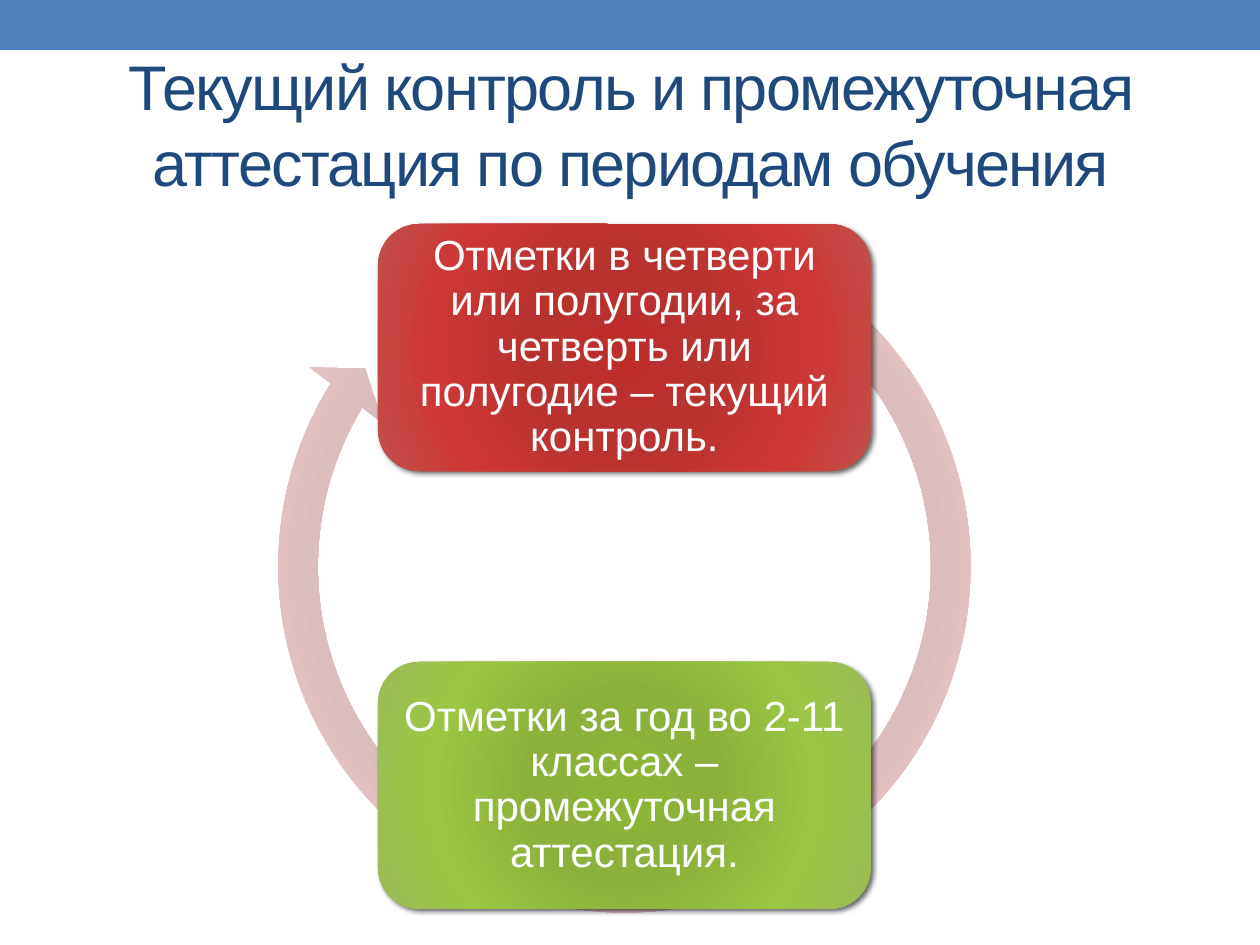
from dataclasses import dataclass

from pptx import Presentation
from pptx import util as u
from pptx.dml.color import RGBColor
from pptx.enum import shapes, text
from pptx.oxml import parse_xml
from pptx.oxml.ns import nsdecls

PX = 914400 / 126


@dataclass(frozen=True)
class Theme:
    font: str = "Arial"
    title_size: int = 36
    card_size: int = 24
    band: str = "4F81BD"
    title: str = "1F497D"
    card_text: str = "FFFFFF"
    shadow: str = "000000"
    arrow: tuple = ("CCADAD", "CBAEAE", "E3C2C2", "E8D0D0")
    red: tuple = ("BD2D29", "B8322E", "CD3834", "C0504D")
    green: tuple = ("8CB537", "8BB13B", "9BC542", "9BBB59")
    stops: tuple = (0, 34, 70, 100)


THEME = Theme()


def px(value):
    return u.Emu(round(value * PX))


def add_plain_shape(slide, kind, box):
    shape = slide.shapes.add_shape(kind, *map(px, box))
    shape.shadow.inherit = False
    shape.line.fill.background()
    return shape


def fill_radial(shape, colors):
    """Fill with a circular gradient centred on the shape."""
    stops = "".join(
        f'<a:gs pos="{stop * 1000}"><a:srgbClr val="{color}"/></a:gs>'
        for stop, color in zip(THEME.stops, colors))
    gradient = parse_xml(
        f'<a:gradFill {nsdecls("a")} rotWithShape="1"><a:gsLst>{stops}</a:gsLst>'
        '<a:path path="circle"><a:fillToRect l="100000" t="100000" r="100000" b="100000"/>'
        '</a:path></a:gradFill>')
    shape._element.spPr.find("{*}prstGeom").addnext(gradient)


def add_shadow(shape):
    effects = shape._element.spPr.find("{*}effectLst")
    effects.append(parse_xml(
        f'<a:outerShdw {nsdecls("a")} blurRad="38100" dist="25400" dir="2700000" rotWithShape="0">'
        f'<a:srgbClr val="{THEME.shadow}"><a:alpha val="60000"/></a:srgbClr></a:outerShdw>'))


def write_text(shape, words, *, size, color, line_spacing=None, tracking=None, inset=None):
    frame = shape.text_frame
    frame.word_wrap = True
    frame.auto_size = text.MSO_AUTO_SIZE.NONE
    frame.vertical_anchor = text.MSO_ANCHOR.MIDDLE
    if inset is not None:
        frame.margin_left = frame.margin_right = px(inset)
        frame.margin_top = frame.margin_bottom = px(inset)
    paragraph = frame.paragraphs[0]
    paragraph.alignment = text.PP_ALIGN.CENTER
    paragraph.line_spacing = line_spacing
    run = paragraph.add_run()
    run.text = words
    run.font.name = THEME.font
    run.font.size = u.Pt(size)
    run.font.color.rgb = RGBColor.from_string(color)
    if tracking is not None:
        run.font._element.set("spc", str(tracking * 100))


def add_band(slide):
    band = add_plain_shape(slide, shapes.MSO_SHAPE.RECTANGLE, (0, 0, 1260, 50))
    band.fill.solid()
    band.fill.fore_color.rgb = RGBColor.from_string(THEME.band)


def set_title(slide, words):
    title = slide.shapes.title
    title.left, title.top, title.width, title.height = map(px, (64, 55, 1134, 136))
    write_text(title, words, size=THEME.title_size, color=THEME.title, tracking=-1)


def add_cycle_arrow(slide):
    arrow = add_plain_shape(slide, shapes.MSO_SHAPE.CIRCULAR_ARROW, (252, 194, 745, 745))
    # Band thickness, head angle, end angle, start angle, head width
    for index, value in enumerate((0.053, 3.439, 126.958, 180.752, 0.062)):
        arrow.adjustments[index] = value
    fill_radial(arrow, THEME.arrow)


def add_card(slide, top, words, colors):
    card = add_plain_shape(slide, shapes.MSO_SHAPE.ROUNDED_RECTANGLE, (378, top, 493, 247))
    fill_radial(card, colors)
    add_shadow(card)
    write_text(card, words, size=THEME.card_size, color=THEME.card_text,
               line_spacing=0.9, inset=13)


def main():
    presentation = Presentation()
    presentation.slide_width, presentation.slide_height = px(1260), px(945)
    slide = presentation.slides.add_slide(presentation.slide_layouts[5])
    add_band(slide)
    set_title(slide, "Текущий контроль и промежуточная аттестация по периодам обучения")
    add_cycle_arrow(slide)
    add_card(slide, 224, "Отметки в четверти или полугодии, за четверть или полугодие"
                         " – текущий контроль.", THEME.red)
    add_card(slide, 662, "Отметки за год во 2-11 классах – промежуточная аттестация.",
             THEME.green)
    presentation.save("out.pptx")


if __name__ == "__main__":
    main()
